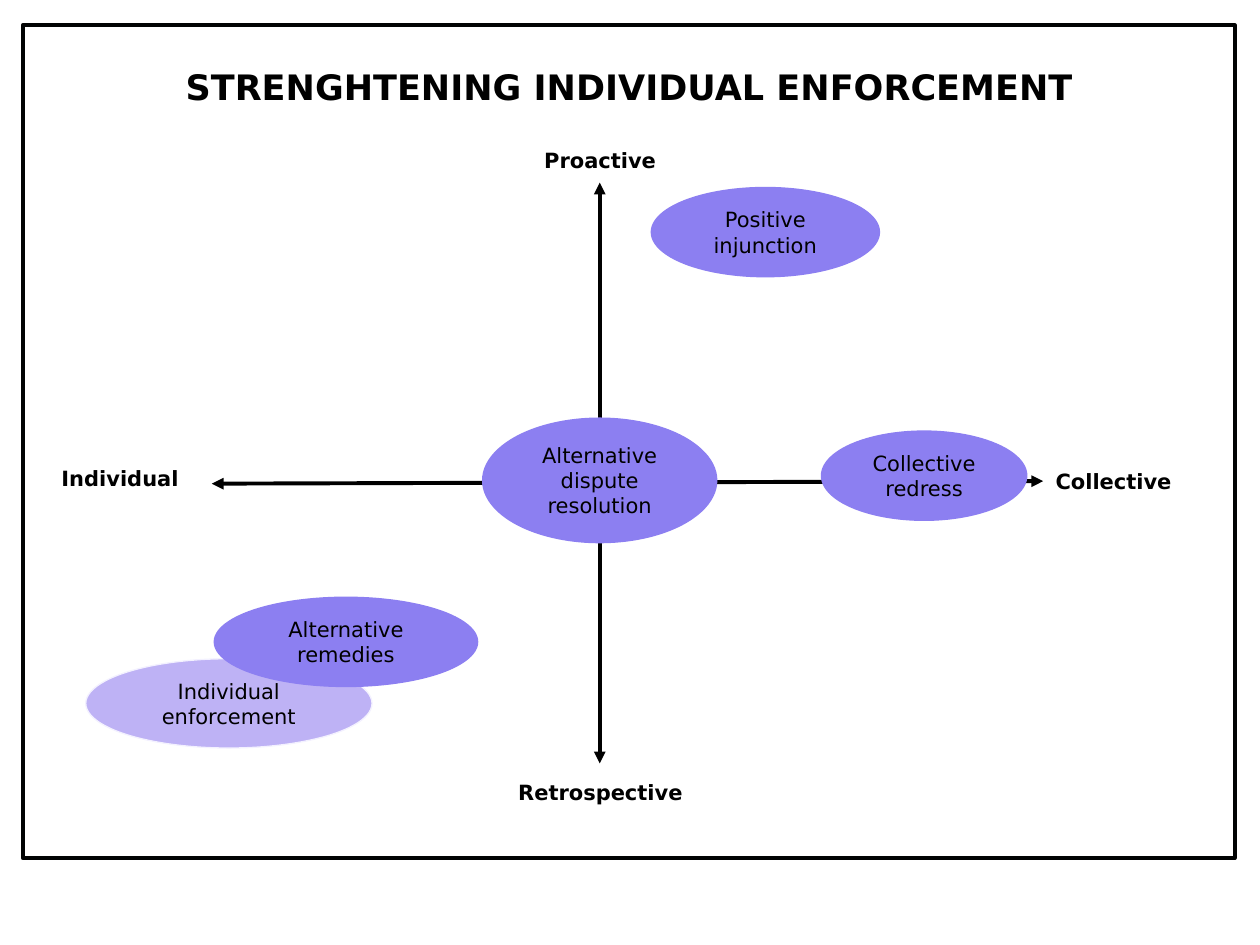
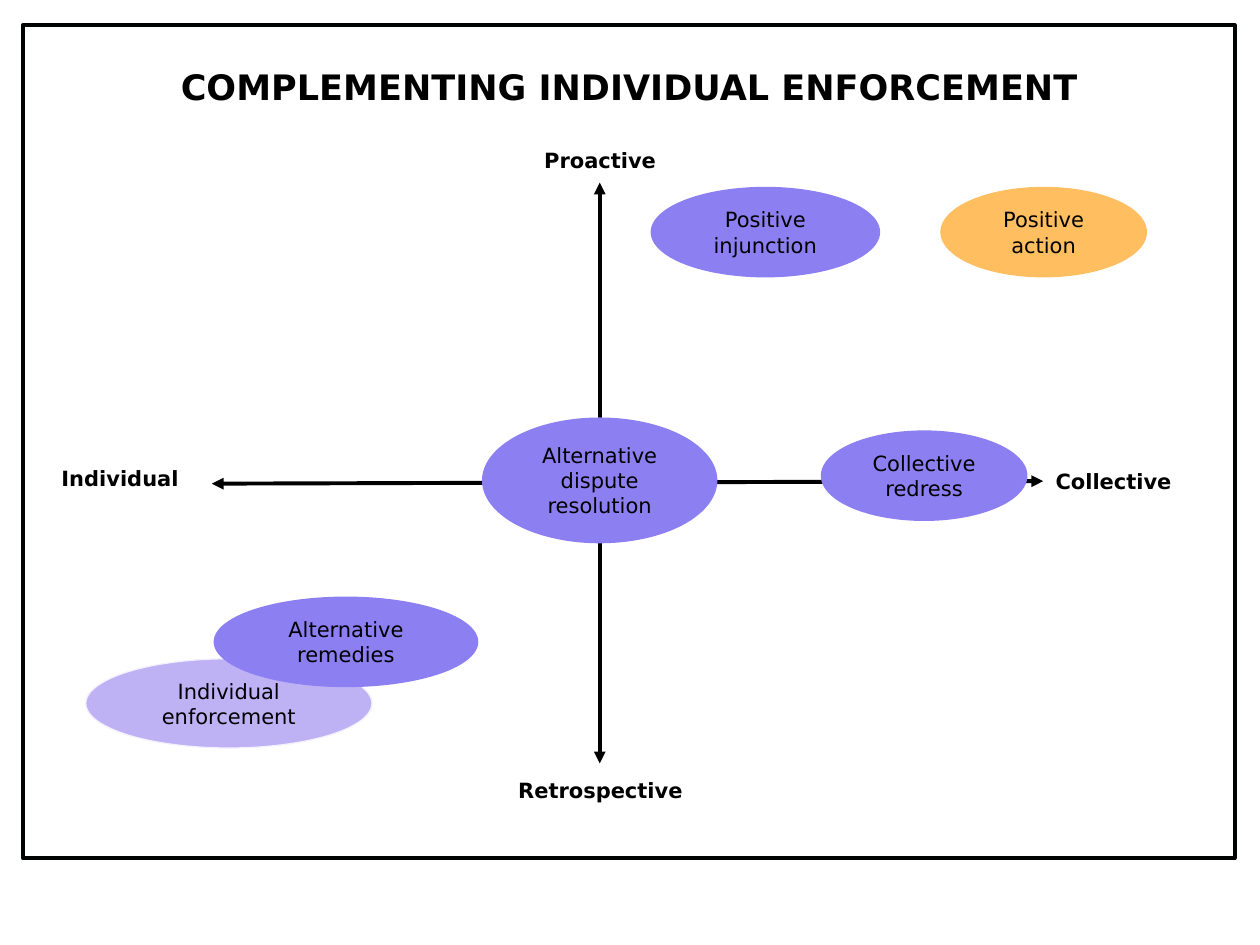
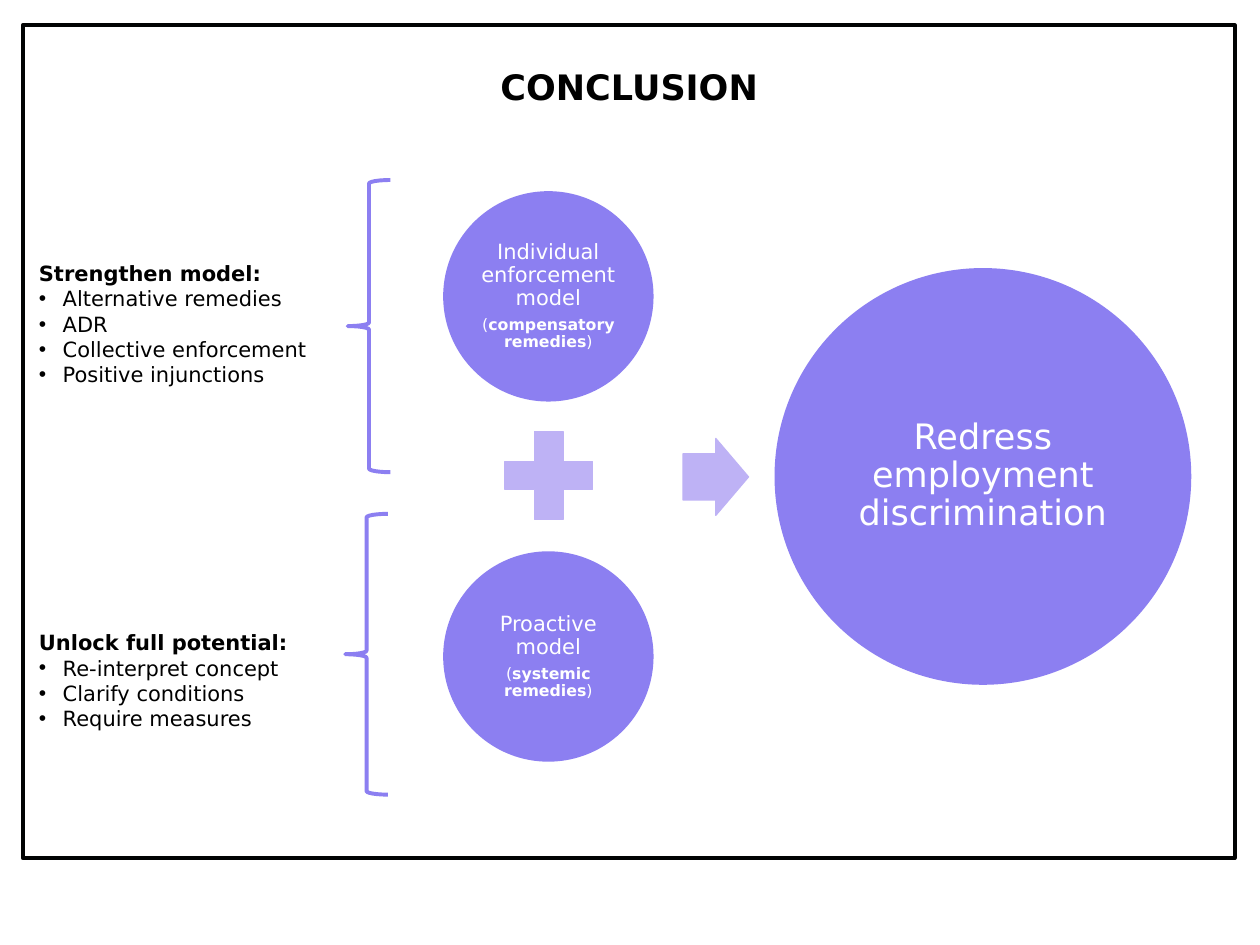
from dataclasses import dataclass

from lxml import etree
from pptx import Presentation
from pptx.dml.color import RGBColor as RGB
from pptx.enum.shapes import MSO_CONNECTOR, MSO_SHAPE
from pptx.enum.text import MSO_ANCHOR as ANCHOR
from pptx.enum.text import MSO_AUTO_SIZE as AUTOSIZE
from pptx.enum.text import PP_ALIGN as ALIGN
from pptx.oxml.ns import qn
from pptx.util import Cm, Pt


@dataclass(frozen=True)
class Theme:
    font: str = "DejaVu Sans"
    black: str = "000000"
    white: str = "FFFFFF"
    frame: str = "010303"
    violet: str = "8C7FF1"
    lilac: str = "BEB2F5"
    pale: str = "F3F1FF"
    orange: str = "FFBE60"
    title_size: float = 20
    text_size: float = 12
    note_size: float = 9
    heavy: float = 2.25
    medium: float = 2
    thin: float = 0.75


T = Theme()
TITLE_ONLY, TWO_CONTENT = 5, 3
OVAL_HEIGHT = 1.8
CIRCLE = 4.17

# text, left, top, width, height, fill, outline
OVALS = [
    ("Individual enforcement", 1.73, 13.28, 5.77, OVAL_HEIGHT, T.lilac, T.pale),
    ("Alternative dispute resolution", 9.73, 8.43, 4.72, 2.51, T.violet, T.violet),
    ("Collective redress", 16.56, 8.69, 4.14, OVAL_HEIGHT, T.violet, T.violet),
    ("Positive injunction", 13.13, 3.78, 4.6, OVAL_HEIGHT, T.violet, T.violet),
    ("Alternative remedies", 4.32, 12.04, 5.31, OVAL_HEIGHT, T.violet, T.violet),
]
POSITIVE_ACTION = ("Positive action", 18.97, 3.78, 4.14, OVAL_HEIGHT, T.orange, T.orange)


def write(p, text, size=T.text_size, color=T.black, bold=False, align=None,
          spacing=None, before=None, after=None):
    """Append a run to p; paragraph settings left at None stay unchanged."""
    if align is not None:
        p.alignment = align
    if spacing is not None:
        p.line_spacing = spacing
    if before is not None:
        p.space_before = Pt(before)
    if after is not None:
        p.space_after = Pt(after)
    r = p.add_run()
    r.text = text
    r.font.name = T.font
    r.font.size = Pt(size)
    r.font.bold = bold
    r.font.color.rgb = RGB.from_string(color)


def place(sp, x, y, w, h):
    sp.left, sp.top, sp.width, sp.height = Cm(x), Cm(y), Cm(w), Cm(h)


def set_margins(tf, margin):
    tf.margin_left = tf.margin_right = tf.margin_top = tf.margin_bottom = Cm(margin)


def add_shape(s, kind, x, y, w, h, fill=None, line=T.violet, width=T.thin):
    sp = s.shapes.add_shape(kind, Cm(x), Cm(y), Cm(w), Cm(h))
    sp.shadow.inherit = False
    if fill:
        sp.fill.solid()
        sp.fill.fore_color.rgb = RGB.from_string(fill)
    else:
        sp.fill.background()
    sp.line.color.rgb = RGB.from_string(line)
    sp.line.width = Pt(width)
    return sp


def add_oval(s, text, x, y, w, h, fill, line):
    tf = add_shape(s, MSO_SHAPE.OVAL, x, y, w, h, fill, line).text_frame
    tf.word_wrap = True
    tf.vertical_anchor = ANCHOR.MIDDLE
    write(tf.paragraphs[0], text, align=ALIGN.CENTER)


def add_circle(s, text, x, y, diameter, size=T.text_size, note=None):
    sp = add_shape(s, MSO_SHAPE.OVAL, x, y, diameter, diameter, T.violet, width=T.medium)
    tf = sp.text_frame
    tf.word_wrap = True
    tf.vertical_anchor = ANCHOR.MIDDLE
    set_margins(tf, 0.05)
    layout = dict(align=ALIGN.CENTER, spacing=0.9)
    write(tf.paragraphs[0], text, size=size, color=T.white, after=4 if note else 0, **layout)
    if note:
        p = tf.add_paragraph()
        for part, bold in (("(", False), (note, True), (")", False)):
            write(p, part, size=T.note_size, color=T.white, bold=bold, **layout)


def add_label(s, text, x, y, w, align=ALIGN.LEFT):
    tf = s.shapes.add_textbox(Cm(x), Cm(y), Cm(w), Cm(0.76)).text_frame
    tf.word_wrap = True
    write(tf.paragraphs[0], text, bold=True, align=align)


def add_axis(s, x1, y1, x2, y2):
    """Draw a line with an arrowhead at both ends."""
    c = s.shapes.add_connector(MSO_CONNECTOR.STRAIGHT, Cm(x1), Cm(y1), Cm(x2), Cm(y2))
    c.line.color.rgb = RGB.from_string(T.black)
    c.line.width = Pt(T.heavy)
    ln = c.line._get_or_add_ln()
    for end in ("a:headEnd", "a:tailEnd"):
        etree.SubElement(ln, qn(end), type="triangle")
    etree.SubElement(c.element.spPr, qn("a:effectLst"))


def set_bullet(p, char=None, indent=0.0):
    pPr = p._p.get_or_add_pPr()
    pPr.set("marL", str(Cm(indent)))
    pPr.set("indent", str(-Cm(indent)))
    if char:
        etree.SubElement(pPr, qn("a:buChar"), char=char)
    else:
        etree.SubElement(pPr, qn("a:buNone"))


def fill_list(body, heading, items, x, y, w, h):
    place(body, x, y, w, h)
    tf = body.text_frame
    tf.word_wrap = True
    tf.auto_size = AUTOSIZE.NONE
    p = tf.paragraphs[0]
    set_bullet(p)
    write(p, heading, bold=True, before=0)
    for item in items:
        p = tf.add_paragraph()
        set_bullet(p, "•", 0.48)
        write(p, item, before=0)


def move_frame_to_master(prs, s):
    """Draw the border on s, then move it to the back of the slide master."""
    frame = add_shape(s, MSO_SHAPE.RECTANGLE, 0.46, 0.51, 24.43, 16.79,
                      line=T.frame, width=T.heavy).element
    frame.nvSpPr.cNvPr.set("id", "100")
    prs.slide_master.shapes.element.insert(2, frame)


def new_slide(prs, title, layout=TITLE_ONLY):
    s = prs.slides.add_slide(prs.slide_layouts[layout])
    sp = s.shapes.title
    place(sp, 1.09, 0.99, 23.19, 1.52)
    tf = sp.text_frame
    tf.auto_size = AUTOSIZE.NONE
    tf.vertical_anchor = ANCHOR.MIDDLE
    write(tf.paragraphs[0], title, size=T.title_size, bold=True, align=ALIGN.CENTER)
    return s


def quadrant_slide(prs, title, ovals, retrospective_top):
    s = new_slide(prs, title)
    add_axis(s, 12.09, 3.68, 12.09, 15.39)
    add_axis(s, 4.27, 9.75, 21.03, 9.7)
    add_label(s, "Collective", 21.03, 9.32, 3.28)
    add_label(s, "Retrospective", 10.11, retrospective_top, 3.99, ALIGN.CENTER)
    add_label(s, "Individual", 0.99, 9.27, 3.28)
    add_label(s, "Proactive", 10.46, 2.84, 3.28, ALIGN.CENTER)
    for oval in ovals:
        add_oval(s, *oval)
    return s


def conclusion_slide(prs):
    s = new_slide(prs, "CONCLUSION", TWO_CONTENT)
    add_circle(s, "Individual enforcement model", 8.97, 3.89, CIRCLE,
               note="compensatory remedies")
    add_shape(s, MSO_SHAPE.MATH_PLUS, 9.86, 8.38, 2.41, 2.41, T.lilac, T.lilac)
    add_circle(s, "Proactive model", 8.97, 11.15, CIRCLE, note="systemic remedies")
    arrow = add_shape(s, MSO_SHAPE.RIGHT_ARROW, 13.77, 8.84, 1.32, 1.55, T.lilac, T.lilac)
    arrow.adjustments[0] = 0.6
    add_circle(s, "Redress employment discrimination", 15.65, 5.44, 8.33, size=T.title_size)
    for x, y, h in ((7.01, 3.63, 5.89), (6.96, 10.36, 5.66)):
        add_shape(s, MSO_SHAPE.LEFT_BRACE, x, y, 0.86, h, width=T.heavy)
    fill_list(s.placeholders[1], "Strengthen model:",
              ["Alternative remedies", "ADR", "Collective enforcement", "Positive injunctions"],
              0.53, 5.13, 6.2, 2.82)
    fill_list(s.placeholders[2], "Unlock full potential:",
              ["Re-interpret concept", "Clarify conditions", "Require measures"],
              0.53, 12.57, 5.89, 2.31)


def main():
    prs = Presentation()
    prs.slide_width, prs.slide_height = Cm(25.4), Cm(19.05)
    first = quadrant_slide(prs, "STRENGHTENING INDIVIDUAL ENFORCEMENT", OVALS, 15.6)
    move_frame_to_master(prs, first)
    quadrant_slide(prs, "COMPLEMENTING INDIVIDUAL ENFORCEMENT",
                   [POSITIVE_ACTION] + OVALS, 15.54)
    conclusion_slide(prs)
    prs.save("out.pptx")


if __name__ == "__main__":
    main()
